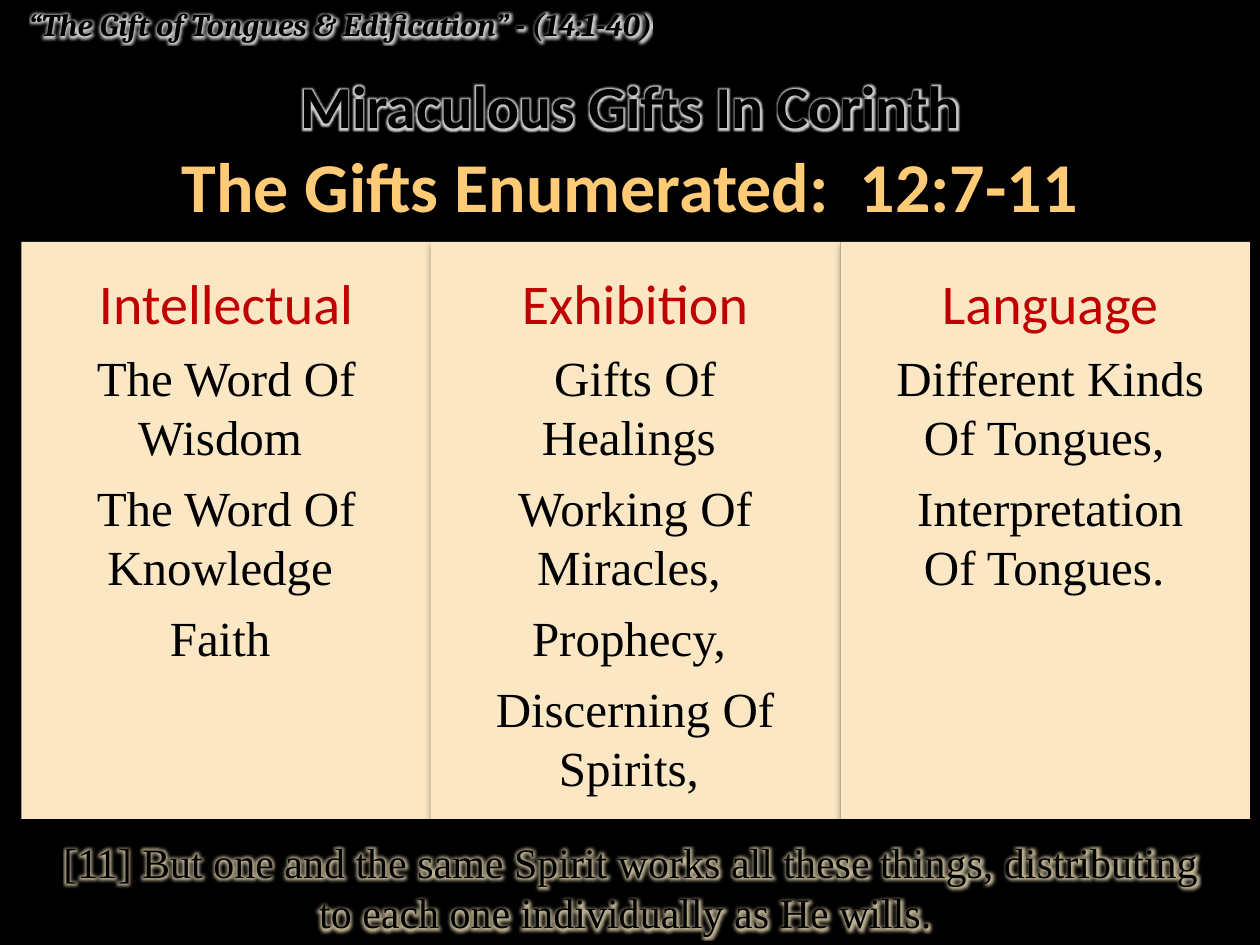
from dataclasses import dataclass

import pptx
import pptx.dml.color
import pptx.enum.shapes
import pptx.enum.text
import pptx.oxml
import pptx.oxml.ns
import pptx.util

Inches = pptx.util.Inches
Pt = pptx.util.Pt
ALIGN = pptx.enum.text.PP_ALIGN

COLOURS = {
    "black": "000000",
    "panel": "FBE7C4",
    "heading": "C00000",
    "white": "FFFFFF",
    "tan": "EEE0B8",
}
GOLD_STOPS = {0: "FFCD7D", 25: "FFCB76", 50: "F0BC60", 75: "FFCB76", 100: "FFCD7D"}

PANEL_LEFT, PANEL_TOP, PANEL_WIDTH, PANEL_HEIGHT = 0.17, 1.92, 3.25, 4.58
COLUMN_TEXT_TOP = 2.08


@dataclass
class Style:
    font: str
    size: float
    colour: str = "black"
    bold: bool = False
    italic: bool = False
    glow: str = ""
    gold: bool = False


@dataclass
class Column:
    left: float
    width: float
    height: float
    heading: str
    gifts: list[str]


@dataclass
class Line:
    left: float
    top: float
    width: float
    height: float
    text: str
    style: Style
    align: ALIGN = ALIGN.CENTER


HEADING = Style("Calibri", 32, "heading")
GIFT = Style("Times New Roman", 28)

COLUMNS = [
    Column(0.17, 3.25, 3.35, "Intellectual",
           ["The Word Of Wisdom ", "The Word Of Knowledge ", "Faith "]),
    Column(3.58, 2.92, 4.41, "Exhibition",
           ["Gifts Of Healings ", "Working Of Miracles, ", "Prophecy, ",
            "Discerning Of Spirits, "]),
    Column(7, 2.67, 3.1, "Language",
           ["Different Kinds Of Tongues, ", "Interpretation Of Tongues. "]),
]

LINES = [
    Line(0.25, 6.59, 9.51, 0.91,
         "[11] But one and the same Spirit works all these things, "
         "distributing to each one individually as He wills. ",
         Style("Times New Roman", 24, glow="tan")),
    Line(0, 1.08, 10, 0.77, "The Gifts Enumerated:  12:7-11",
         Style("Calibri", 40, bold=True, gold=True)),
    Line(0, 0.5, 10, 0.67, "Miraculous Gifts In Corinth",
         Style("Calibri", 34, bold=True, glow="white")),
    Line(0.13, -0.01, 8.7, 0.4, "“The Gift of Tongues & Edification” - (14:1-40)",
         Style("Cambria", 18, bold=True, italic=True, glow="white"), ALIGN.LEFT),
]


def rgb(name: str) -> pptx.dml.color.RGBColor:
    return pptx.dml.color.RGBColor.from_string(COLOURS[name])


def drawing_xml(body: str):
    """Parse an element body whose first tag is in the drawing namespace."""
    tag_end = min(body.index(mark) for mark in (" ", ">") if mark in body)
    namespace = " " + pptx.oxml.ns.nsdecls("a")
    return pptx.oxml.parse_xml(body[:tag_end] + namespace + body[tag_end:])


def gold_gradient():
    stops = "".join(
        f'<a:gs pos="{percent * 1000}"><a:srgbClr val="{colour}"/></a:gs>'
        for percent, colour in GOLD_STOPS.items())
    return drawing_xml(f'<a:gradFill rotWithShape="1"><a:gsLst>{stops}</a:gsLst>'
                       '<a:lin ang="5400000" scaled="0"/></a:gradFill>')


def glow_effect(colour: str):
    return drawing_xml(
        f'<a:effectLst><a:glow rad="{Pt(5)}"><a:srgbClr val="{COLOURS[colour]}">'
        '<a:alpha val="80000"/></a:srgbClr></a:glow></a:effectLst>')


def panel_shadow():
    return drawing_xml(
        f'<a:effectLst><a:outerShdw blurRad="{Pt(3.5)}" dist="{Pt(2.2)}" dir="5400000" '
        f'rotWithShape="0"><a:srgbClr val="{COLOURS["black"]}"><a:alpha val="32000"/>'
        '</a:srgbClr></a:outerShdw></a:effectLst>')


def style_span(span, style: Style) -> None:
    formats = {"name": style.font, "size": Pt(style.size),
               "bold": style.bold, "italic": style.italic}
    for attribute, value in formats.items():
        setattr(span.font, attribute, value)
    properties = span.font._element
    latin = properties.find(pptx.oxml.ns.qn("a:latin"))
    if style.gold:
        latin.addprevious(gold_gradient())
    else:
        span.font.color.rgb = rgb(style.colour)
    if style.glow:
        latin.addprevious(glow_effect(style.glow))


def add_text_box(slide, left: float, top: float, width: float, height: float):
    box = slide.shapes.add_textbox(Inches(left), Inches(top), Inches(width), Inches(height))
    box.text_frame.word_wrap = True
    box.text_frame.auto_size = pptx.enum.text.MSO_AUTO_SIZE.SHAPE_TO_FIT_TEXT
    return box.text_frame


def write(para, text: str, style: Style, align: ALIGN = ALIGN.CENTER) -> None:
    para.alignment = align
    span = para.add_run()
    span.text = text
    style_span(span, style)


def add_panel(slide, index: int) -> None:
    panel = slide.shapes.add_shape(
        pptx.enum.shapes.MSO_SHAPE.RECTANGLE,
        Inches(PANEL_LEFT + index * PANEL_WIDTH), Inches(PANEL_TOP),
        Inches(PANEL_WIDTH), Inches(PANEL_HEIGHT))
    panel.fill.solid()
    panel.fill.fore_color.rgb = rgb("panel")
    panel.line.fill.background()
    panel._element.spPr.append(panel_shadow())


def add_column(slide, column: Column) -> None:
    frame = add_text_box(slide, column.left, COLUMN_TEXT_TOP, column.width, column.height)
    for index, text in enumerate([column.heading, *column.gifts]):
        para = frame.add_paragraph() if index else frame.paragraphs[0]
        para.space_before = Pt(7)
        write(para, text, GIFT if index else HEADING)


def add_line(slide, line: Line) -> None:
    frame = add_text_box(slide, line.left, line.top, line.width, line.height)
    write(frame.paragraphs[0], line.text, line.style, line.align)


def main() -> None:
    deck = pptx.Presentation()
    deck.slide_width, deck.slide_height = Inches(10), Inches(7.5)
    slide = deck.slides.add_slide(deck.slide_layouts[6])
    slide.background.fill.solid()
    slide.background.fill.fore_color.rgb = rgb("black")
    for index in range(len(COLUMNS)):
        add_panel(slide, index)
    for column in COLUMNS:
        add_column(slide, column)
    for line in LINES:
        add_line(slide, line)
    deck.save("out.pptx")


if __name__ == "__main__":
    main()
